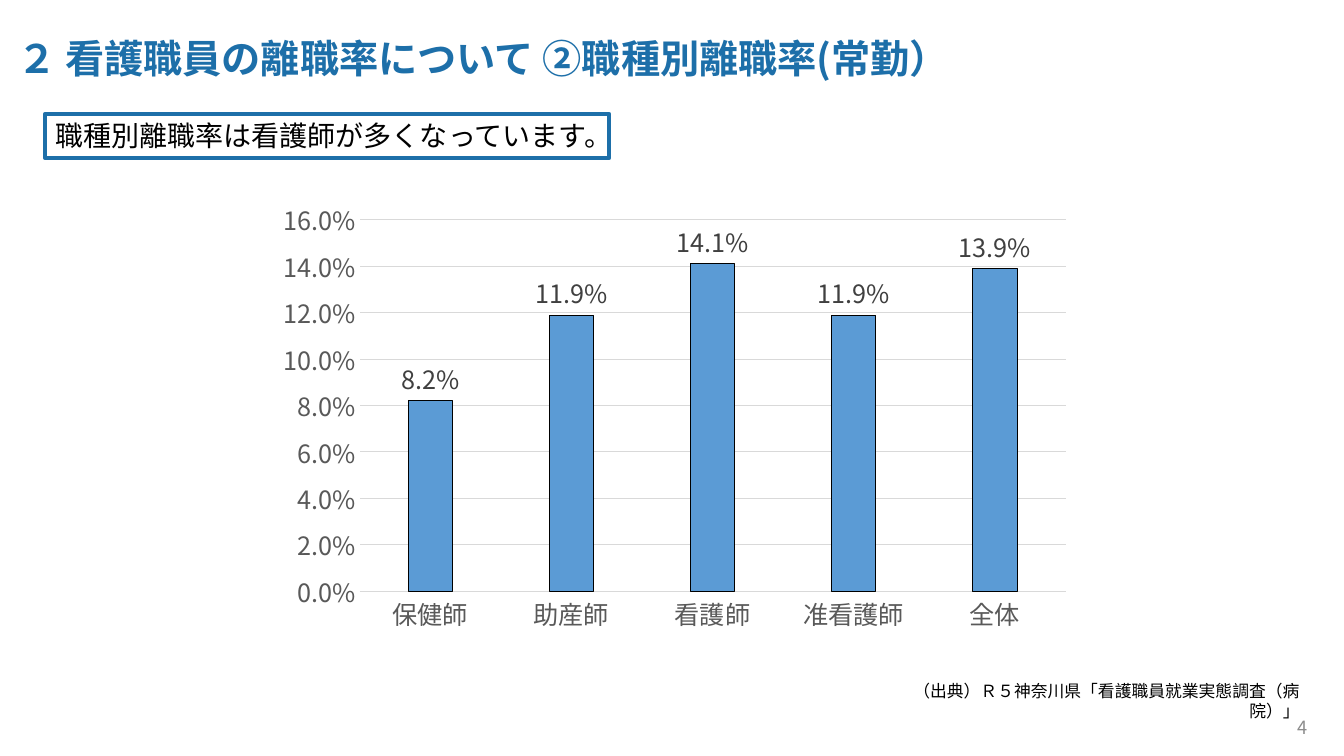
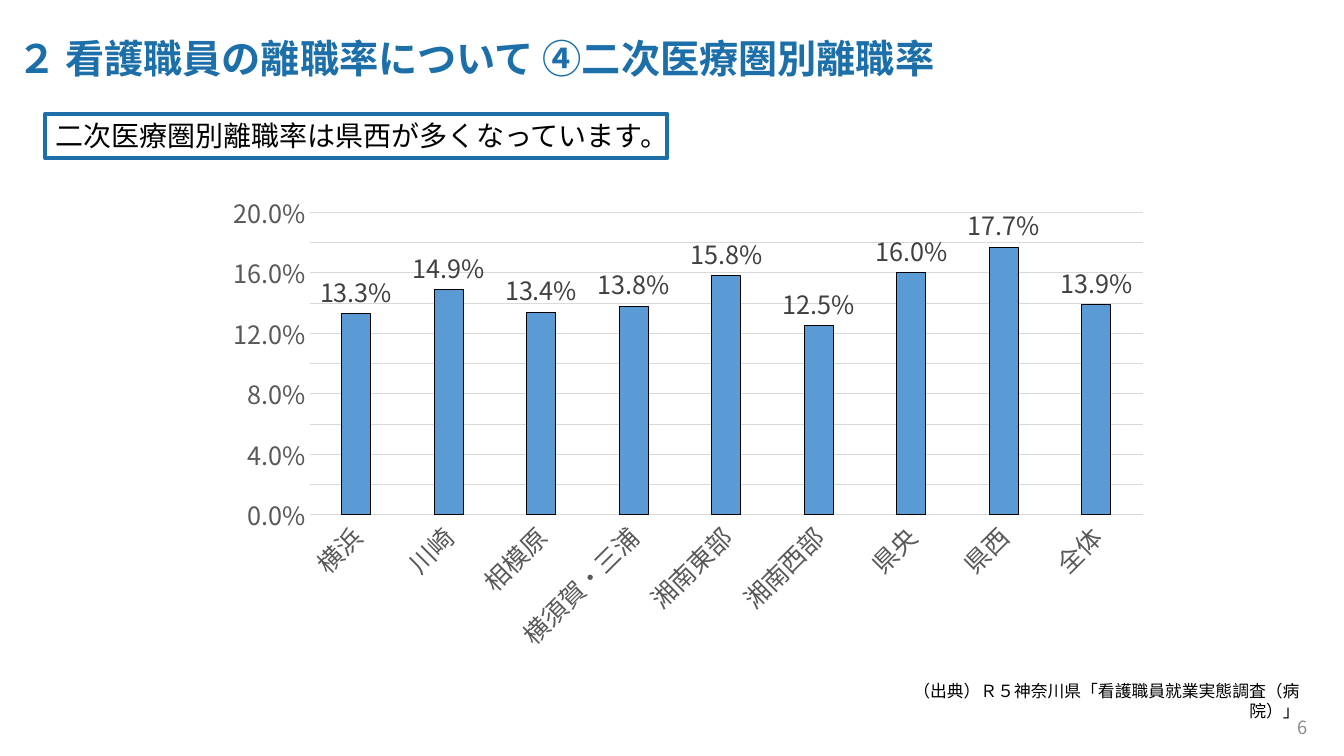
from lxml.etree import SubElement
from pptx import Presentation
from pptx.chart.data import CategoryChartData
from pptx.dml.color import RGBColor
from pptx.enum.chart import XL_CHART_TYPE as CT, XL_LABEL_POSITION as LP, XL_TICK_MARK as TM
from pptx.enum.shapes import MSO_SHAPE
from pptx.enum.text import MSO_ANCHOR as ANC, MSO_AUTO_SIZE as FIT, PP_ALIGN as AL
from pptx.oxml.ns import qn
from pptx.util import Inches, Pt


class Theme:
    font = "Noto Sans CJK JP"
    blue = RGBColor.from_string("1D6FA9")
    bar = RGBColor.from_string("5B9BD5")
    grid = RGBColor.from_string("D9D9D9")
    black = RGBColor.from_string("000000")
    title = {"size": Pt(28), "bold": True}, blue
    message = {"size": Pt(20)}, black
    source = {"size": Pt(12)}, black
    number = {"size": Pt(13)}, RGBColor.from_string("8C8C8C")
    axis = {"size": Pt(18)}, RGBColor.from_string("595959")
    label = {"size": Pt(18)}, RGBColor.from_string("404040")


def style_font(font, style):
    values, color = style
    for name, value in {"name": Theme.font, **values}.items():
        setattr(font, name, value)
    SubElement(font._rPr, qn("a:ea"), typeface=Theme.font)
    font.color.rgb = color


def write(shape, text, style, align, **frame):
    tf = shape.text_frame
    for name, value in {"word_wrap": True, **frame}.items():
        setattr(tf, name, value)
    p = tf.paragraphs[0]
    p.alignment = align
    r = p.add_run()
    r.text = text
    style_font(r.font, style)
    return p


SOURCE = "（出典）Ｒ５神奈川県「看護職員就業実態調査（病院）」"
SLIDES = [
    {
        "number": "4",
        "title": "②職種別離職率(常勤）",
        "message": "職種別離職率は看護師が多くなっています。",
        "message_width": 5.59,
        "chart_at": (2.65, 1.91, 8.08, 4.45),
        "axis_max": 0.16,
        "label_turn": 0,
        "rates": {"保健師": 0.082, "助産師": 0.119, "看護師": 0.141,
                  "准看護師": 0.119, "全体": 0.139},
    },
    {
        "number": "6",
        "title": "④二次医療圏別離職率",
        "message": "二次医療圏別離職率は県西が多くなっています。",
        "message_width": 6.17,
        "chart_at": (2.13, 1.83, 9.39, 4.73),
        "axis_max": 0.2,
        "label_turn": -45,
        "rates": {"横浜": 0.133, "川崎": 0.149, "相模原": 0.134,
                  "横須賀・三浦": 0.138, "湘南東部": 0.158, "湘南西部": 0.125,
                  "県央": 0.16, "県西": 0.177, "全体": 0.139},
    },
]

prs = Presentation()
prs.slide_width, prs.slide_height = Inches(13.33), Inches(7.5)
layout = prs.slide_layouts[5]

for page in SLIDES:
    s = prs.slides.add_slide(layout)

    title = s.shapes.title
    title.left, title.top = Inches(0.07), Inches(0)
    title.width, title.height = Inches(13.53), Inches(0.86)
    p = write(title, "２ 看護職員の離職率について " + page["title"], Theme.title, AL.LEFT,
              vertical_anchor=ANC.BOTTOM, auto_size=FIT.NONE)
    p.line_spacing = 0.9

    number = s.shapes.add_textbox(Inches(10.07), Inches(7.01), Inches(3), Inches(0.4))
    write(number, page["number"], Theme.number, AL.RIGHT, vertical_anchor=ANC.MIDDLE)

    source = s.shapes.add_textbox(Inches(8.85), Inches(6.7), Inches(4.14), Inches(0.3))
    write(source, SOURCE, Theme.source, AL.RIGHT, auto_size=FIT.SHAPE_TO_FIT_TEXT)

    message = s.shapes.add_shape(MSO_SHAPE.RECTANGLE, Inches(0.45), Inches(1.13),
                                 Inches(page["message_width"]), Inches(0.44))
    message.shadow.inherit = False
    message.fill.background()
    message.line.color.rgb = Theme.blue
    message.line.width = Pt(3)
    write(message, page["message"], Theme.message, AL.LEFT,
          vertical_anchor=ANC.TOP, auto_size=FIT.SHAPE_TO_FIT_TEXT)

    data = CategoryChartData(number_format="0.0%")
    data.categories = page["rates"].keys()
    data.add_series("離職率", page["rates"].values())
    place = [Inches(v) for v in page["chart_at"]]
    chart = s.shapes.add_chart(CT.COLUMN_CLUSTERED, *place, data).chart
    chart.has_title = chart.has_legend = False
    style_font(chart.font, Theme.axis)

    cat, val = chart.category_axis, chart.value_axis
    for axis in (cat, val):
        axis.major_tick_mark = axis.minor_tick_mark = TM.NONE
        style_font(axis.tick_labels.font, Theme.axis)
    for name, value in {"minimum_scale": 0, "maximum_scale": page["axis_max"],
                        "major_unit": 0.02}.items():
        setattr(val, name, value)
    val.tick_labels.number_format = "0.0%"
    val.tick_labels.number_format_is_linked = False
    val.format.line.fill.background()
    if page["label_turn"]:
        body = cat._element.find(qn("c:txPr")).find(qn("a:bodyPr"))
        body.set("rot", str(page["label_turn"] * 60000))

    plot = chart.plots[0]
    for name, value in {"gap_width": 219, "overlap": -27, "vary_by_categories": False,
                        "has_data_labels": True}.items():
        setattr(plot, name, value)
    bars = plot.series[0].format
    bars.fill.solid()
    bars.fill.fore_color.rgb = Theme.bar
    for line, color in ((cat.format.line, Theme.grid), (bars.line, Theme.black),
                        (val.major_gridlines.format.line, Theme.grid)):
        line.color.rgb = color
        line.width = Pt(0.75)

    labels = plot.data_labels
    for name, value in {"show_value": True, "position": LP.OUTSIDE_END,
                        "number_format": "0.0%", "number_format_is_linked": False}.items():
        setattr(labels, name, value)
    style_font(labels.font, Theme.label)

prs.save("out.pptx")
